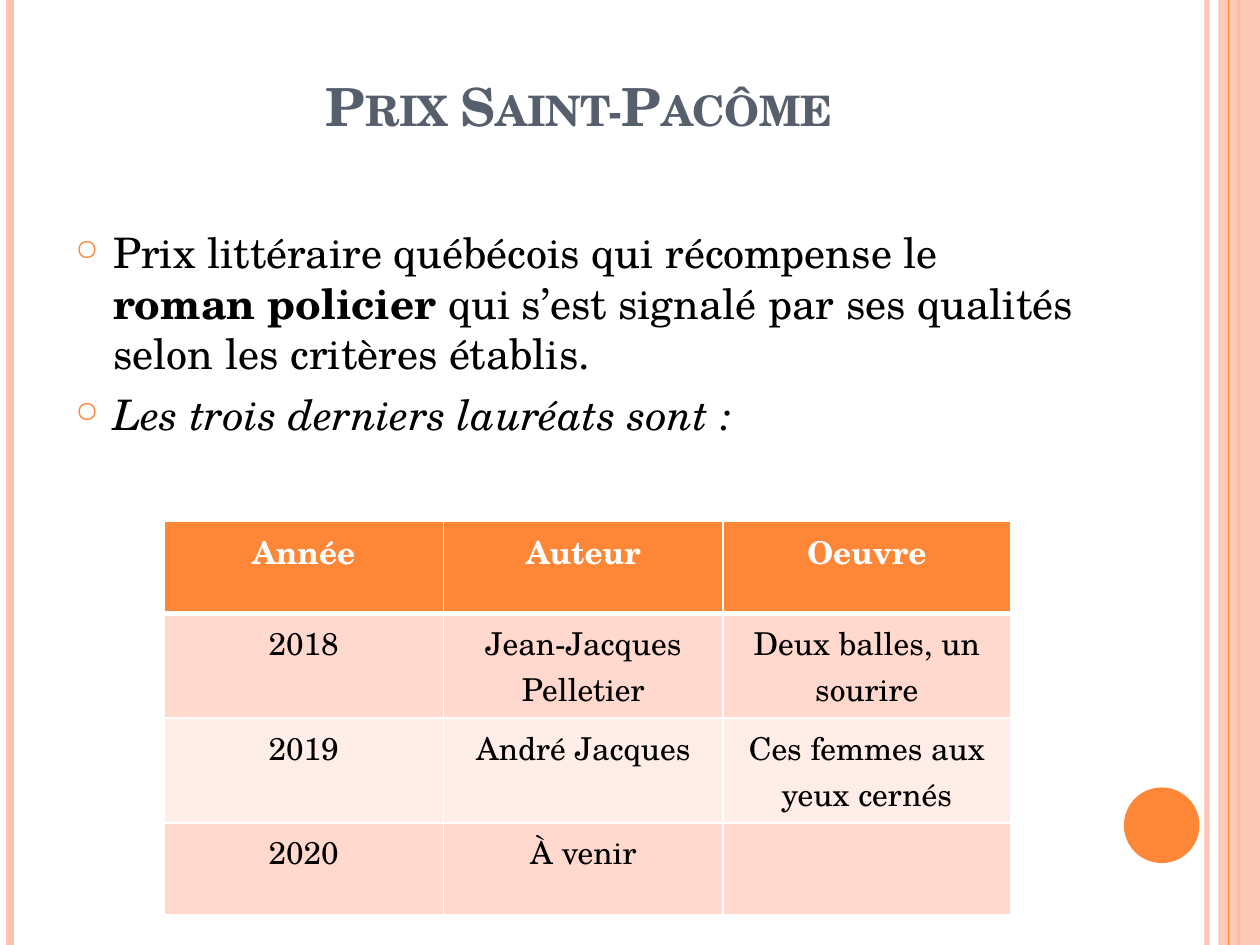
from lxml import etree
from pptx import Presentation
from pptx.dml.color import RGBColor
from pptx.enum import shapes, text
from pptx.oxml import ns
from pptx.util import Inches, Pt

COLORS = {"orange": "FE8637", "peach": "FEC3AE", "slate": "575F6D", "black": "000000",
          "white": "FFFFFF", "band_dark": "FFD9CE", "band_light": "FFEDE8"}


def add_xml(parent, tag, **attributes):
    return etree.SubElement(parent, ns.qn(tag), attributes)


def add_run(paragraph, words, color, **formats):
    run = paragraph.add_run()
    run.text = words
    run.font.color.rgb = RGBColor.from_string(COLORS[color])
    for key, value in {"name": "TeX Gyre Schola", **formats}.items():
        setattr(run.font, key, value)
    return run


prs = Presentation()
prs.slide_width, prs.slide_height = Inches(10), Inches(7.5)
slide = prs.slides.add_slide(prs.slide_layouts[6])

RECTANGLE, OVAL = shapes.MSO_SHAPE.RECTANGLE, shapes.MSO_SHAPE.OVAL
for kind, left, top, width, height, color, weight, alpha in [
    (None, 9.58, 0, 0, 7.5, "peach", 3, 93),
    (None, 0.08, 0, 0, 7.5, "peach", 4.5, 100),
    (None, 9.83, 0, 0, 7.5, "orange", 1.5, 100),
    (RECTANGLE, 9.67, 0, 0.33, 7.5, "peach", 0, 87),
    (None, 9.75, 0, 0, 7.5, "orange", 0.75, 100),
    (OVAL, 8.92, 6.25, 0.6, 0.6, "orange", 0, 100),
]:
    if kind is None:
        ornament = slide.shapes.add_connector(shapes.MSO_CONNECTOR.STRAIGHT, Inches(left), Inches(top),
                                              Inches(left + width), Inches(top + height))
        ornament.line.color.rgb = RGBColor.from_string(COLORS[color])
        ornament.line.width = Pt(weight)
        add_xml(ornament._element.spPr, "a:effectLst")
    else:
        ornament = slide.shapes.add_shape(kind, Inches(left), Inches(top), Inches(width), Inches(height))
        ornament.shadow.inherit = False
        ornament.fill.solid()
        ornament.fill.fore_color.rgb = RGBColor.from_string(COLORS[color])
        ornament.line.fill.background()
    if alpha < 100:
        tint = ornament._element.spPr.find(".//" + ns.qn("a:srgbClr"))
        add_xml(tint, "a:alpha", val=str(alpha * 1000))

title = slide.shapes.add_textbox(Inches(0.51), Inches(0.13), Inches(8.17), Inches(1.01)).text_frame
title.word_wrap = True
title.vertical_anchor = text.MSO_ANCHOR.BOTTOM
title.paragraphs[0].alignment = text.PP_ALIGN.CENTER
heading = add_run(title.paragraphs[0], "Prix Saint-Pacôme", "slate", size=Pt(30), bold=True)
heading.font._element.set("cap", "small")

body = slide.shapes.add_textbox(Inches(0.5), Inches(1.75), Inches(8.17), Inches(5.33)).text_frame
body.word_wrap = True
points = [
    [("Prix littéraire québécois qui récompense le ", {}),
     ("roman policier ", {"bold": True}),
     ("qui s’est signalé par ses qualités selon les critères établis.", {})],
    [("Les trois derniers lauréats sont :", {"italic": True})],
]
for index, point in enumerate(points):
    paragraph = body.add_paragraph() if index else body.paragraphs[0]
    paragraph.space_before = Pt(6)
    layout = paragraph._p.get_or_add_pPr()
    layout.set("marL", str(Inches(0.3)))
    layout.set("indent", str(Inches(-0.3)))
    add_xml(add_xml(layout, "a:buClr"), "a:srgbClr", val=COLORS["orange"])
    add_xml(layout, "a:buSzPct", val="70000")
    add_xml(layout, "a:buChar", char="○")
    for words, formats in point:
        add_run(paragraph, words, "black", size=Pt(24), **formats)

winners = [
    ("Année", "Auteur", "Oeuvre"),
    ("2018", "Jean-Jacques Pelletier", "Deux balles, un sourire"),
    ("2019", "André Jacques", "Ces femmes aux yeux cernés"),
    ("2020", "À venir", ""),
]
row_heights = [0.73, 0.83, 0.83, 0.73]
row_fills = ["orange", "band_dark", "band_light", "band_dark"]
table = slide.shapes.add_table(4, 3, Inches(1.3), Inches(4.14), Inches(6.72), Inches(3.12)).table
table.horz_banding = False
for column, width in zip(table.columns, [2.22, 2.22, 2.28]):
    column.width = Inches(width)
for r, winner in enumerate(winners):
    table.rows[r].height = Inches(row_heights[r])
    for c, words in enumerate(winner):
        cell = table.cell(r, c)
        cell.fill.solid()
        cell.fill.fore_color.rgb = RGBColor.from_string(COLORS[row_fills[r]])
        paragraph = cell.text_frame.paragraphs[0]
        paragraph.alignment = text.PP_ALIGN.CENTER
        if words:
            add_run(paragraph, words, "black" if r else "white", size=Pt(18), bold=r == 0)
        borders = {"a:lnL": 1, "a:lnR": 1, "a:lnT": 3 if r == 1 else 1, "a:lnB": 1 if r else 3}
        cell_properties = cell._tc.get_or_add_tcPr()
        for position, (side, weight) in enumerate(borders.items()):
            border = add_xml(cell_properties, side, w=str(Pt(weight)))
            add_xml(add_xml(border, "a:solidFill"), "a:srgbClr", val=COLORS["white"])
            cell_properties.insert(position, border)

prs.save("out.pptx")
